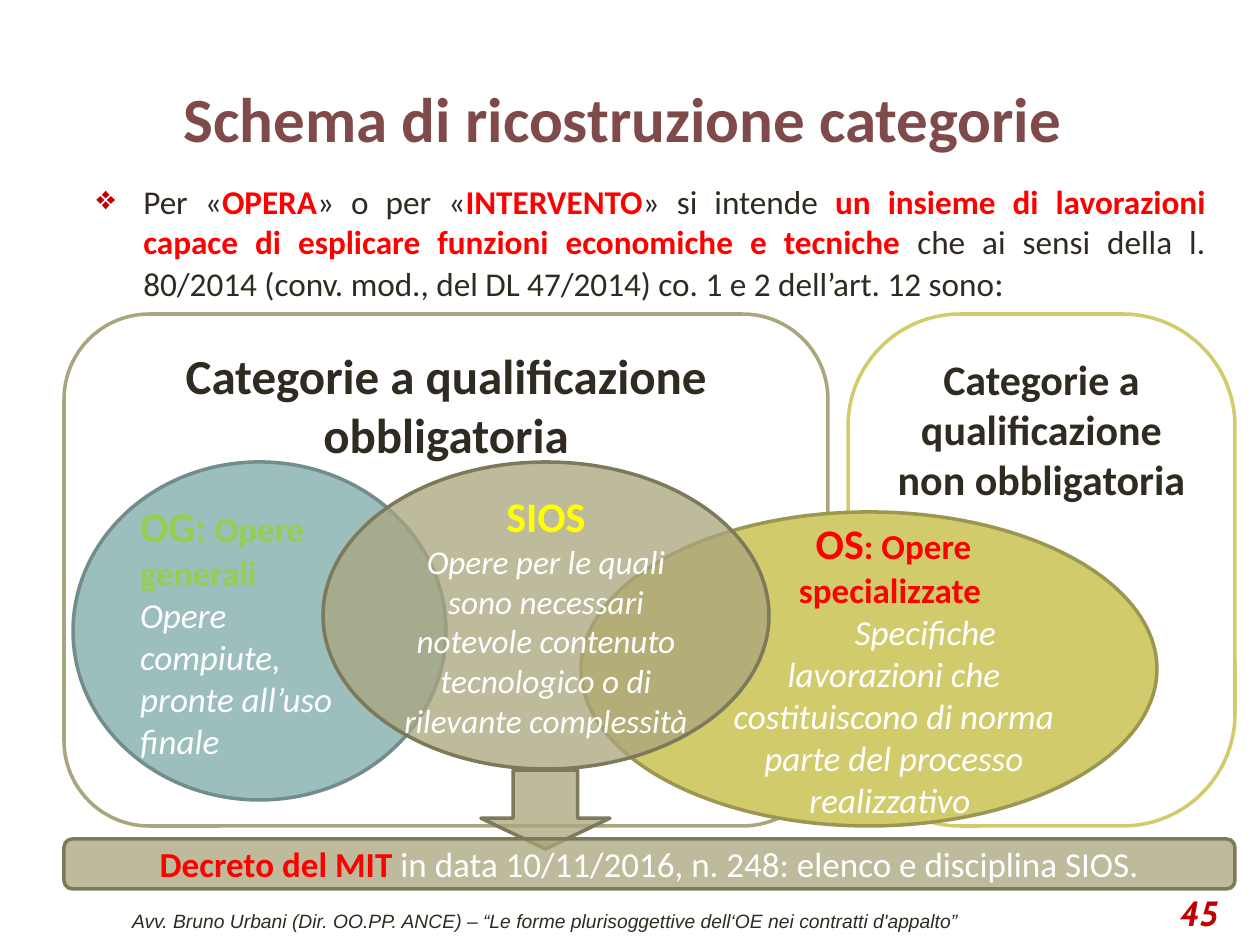
from lxml.etree import SubElement
from pptx import Presentation
from pptx.dml.color import RGBColor
from pptx.enum.shapes import MSO_SHAPE as Preset
from pptx.enum.text import MSO_ANCHOR as Anchor, PP_ALIGN as Align
from pptx.oxml.ns import qn
from pptx.util import Emu, Pt

DARK, RED, WHITE = "2F2B20", "FF0000", "FFFFFF"
KHAKI, KHAKI_DARK, LIME, GREEN = "A9A57C", "7D7A5C", "D2CB6C", "92D050"


def px(value):
    """Turn px at 126 to the inch into EMU."""
    return Emu(round(value * 914400 / 126))


def color(hex_value):
    """Turn a hex string into a colour."""
    return RGBColor.from_string(hex_value)


def apply(target, values):
    """Set each attribute of the target from a dict."""
    for name, value in values.items():
        setattr(target, name, value)


def add_run(paragraph, text, size, hex_value, style="", font="Calibri"):
    """Add a run; the style holds b for bold and i for italic."""
    run = paragraph.add_run()
    run.text = text
    apply(run.font, {"name": font, "size": Pt(size),
                     "bold": "b" in style, "italic": "i" in style})
    run.font.color.rgb = color(hex_value)


def add_indent(paragraph, left, hanging=0, bullet=None, tab=None):
    """Give a paragraph its indent, bullet and tab stop."""
    properties = paragraph._p.get_or_add_pPr()
    properties.set("marL", str(px(left)))
    properties.set("indent", str(-px(hanging)))
    if bullet:
        bullet_color = SubElement(properties, qn("a:buClr"))
        SubElement(bullet_color, qn("a:srgbClr"), val="C00000")
        SubElement(properties, qn("a:buChar"), char=bullet)
    if tab:
        tabs = SubElement(properties, qn("a:tabLst"))
        SubElement(tabs, qn("a:tab"), pos=str(px(tab)), algn="l")


def fill_text(shape, paragraphs, align=Align.CENTER, anchor=Anchor.MIDDLE,
              spacing=None, indent=None):
    """Write paragraphs, each a list of runs, into a shape."""
    frame = shape.text_frame
    apply(frame, {"word_wrap": True, "vertical_anchor": anchor})
    for index, runs in enumerate(paragraphs):
        paragraph = frame.add_paragraph() if index else frame.paragraphs[0]
        if indent:
            add_indent(paragraph, **indent)
        apply(paragraph, {"alignment": align, "line_spacing": spacing})
        for run in runs:
            add_run(paragraph, *run)


def add_text(slide, box, runs, **layout):
    """Add a text box of one paragraph."""
    fill_text(slide.shapes.add_textbox(*map(px, box)), [runs], **layout)


def add_shape(slide, preset, box, fill, line, alpha=None, adjustments=()):
    """Add a filled and outlined preset shape."""
    shape = slide.shapes.add_shape(preset, *map(px, box))
    shape.shadow.inherit = False
    shape.fill.solid()
    shape.fill.fore_color.rgb = color(fill)
    shape.line.color.rgb = color(line)
    shape.line.width = Pt(2)
    for index, value in enumerate(adjustments):
        shape.adjustments[index] = value
    if alpha:
        solid = shape._element.spPr.find(qn("a:solidFill"))
        SubElement(solid[0], qn("a:alpha"), val=str(alpha * 1000))
    return shape


def add_khaki(slide, preset, box, adjustments=()):
    """Add a see-through khaki shape."""
    return add_shape(slide, preset, box, KHAKI, KHAKI_DARK, 75, adjustments)


def add_header_and_footer(slide):
    """Add the footer, slide number, title and opening paragraph."""
    add_text(slide, (64, 903, 963, 37), [
        ("Avv. Bruno Urbani (Dir. OO.PP. ANCE) – “Le forme plurisoggettive "
         "dell‘OE nei contratti d'appalto”", 11, DARK, "i", "Arial")],
        anchor=Anchor.TOP)
    add_text(slide, (937, 888, 294, 50),
             [("45", 20, "C00000", "bi", "Cabin")], align=Align.RIGHT)
    add_text(slide, (63, 38, 1134, 158),
             [("Schema di ricostruzione categorie ", 36, "804A4B", "b")])
    add_text(slide, (84, 175, 1134, 79), [
        ("Per «", 19, DARK), ("OPERA", 19, RED, "b"),
        ("» o per «", 19, DARK), ("INTERVENTO", 19, RED, "b"),
        ("» si intende ", 19, DARK),
        ("un insieme di lavorazioni capace di esplicare funzioni "
         "economiche e tecniche ", 19, RED, "b"),
        ("che ai sensi della l. 80/2014 (conv. mod., del DL 47/2014) "
         "co. 1 e 2 dell’art. 12 sono", 19, DARK), (":", 20, DARK)],
        align=Align.JUSTIFY, anchor=Anchor.TOP,
        indent={"left": 47, "hanging": 47, "bullet": "❖"})


def add_frames(slide):
    """Add the two category frames."""
    required = add_shape(slide, Preset.ROUNDED_RECTANGLE,
                         (64, 314, 764, 512), WHITE, KHAKI)
    fill_text(required, [[("Categorie a qualificazione obbligatoria",
                           28, DARK, "b")]], anchor=Anchor.TOP)
    optional = add_shape(slide, Preset.ROUNDED_RECTANGLE,
                         (848, 314, 387, 512), WHITE, LIME,
                         adjustments=[0.29])
    fill_text(optional, [[("Categorie a qualificazione non obbligatoria",
                           24, DARK, "b")]],
              anchor=Anchor.TOP, spacing=Pt(28.8))


def add_ellipses(slide):
    """Add the three overlapping groups of works."""
    general = add_shape(slide, Preset.OVAL, (73, 462, 373, 338),
                        "9CBEBD", "738D8C")
    fill_text(general, [
        [("OG:", 24, GREEN, "b"), (" Opere", 20, GREEN, "b")],
        [("generali", 20, GREEN, "b")],
        [("Opere", 20, WHITE, "i")],
        [("compiute, pronte all’uso finale", 20, WHITE, "i")]],
        align=Align.LEFT)
    special = add_shape(slide, Preset.OVAL, (581, 512, 576, 314),
                        LIME, "9B9650")
    fill_text(special, [
        [(" ", 18, WHITE), ("OS", 24, RED, "b"), (": Opere ", 20, RED, "b")],
        [("specializzate ", 20, RED, "b")],
        [("\t", 20, RED, "bi"),
         ("Specifiche lavorazioni che costituiscono di norma parte del "
          "processo realizzativo ", 20, WHITE, "i")]],
        indent={"left": 50, "tab": 50})
    fill_text(add_khaki(slide, Preset.OVAL, (323, 462, 446, 307)), [
        [("SIOS", 24, "FFFF00", "b")],
        [("Opere per le quali sono necessari notevole contenuto tecnologico "
          "o di rilevante complessità", 19, WHITE, "i")]])


def add_decree(slide):
    """Add the arrow and the decree bar below the groups."""
    add_khaki(slide, Preset.DOWN_ARROW, (481, 770, 129, 79), [0.5, 0.39])
    bar = add_khaki(slide, Preset.ROUNDED_RECTANGLE, (64, 839, 1171, 50))
    fill_text(bar, [[
        ("Decreto del MIT ", 20, RED, "b"),
        ("in data 10/11/2016, n. 248: elenco e disciplina SIOS.",
         20, WHITE)]])


def main():
    """Build and save the slide."""
    presentation = Presentation()
    apply(presentation, {"slide_width": px(1260), "slide_height": px(945)})
    slide = presentation.slides.add_slide(presentation.slide_layouts[6])
    for add_part in (add_header_and_footer, add_frames, add_ellipses,
                     add_decree):
        add_part(slide)
    presentation.save("out.pptx")


if __name__ == "__main__":
    main()
